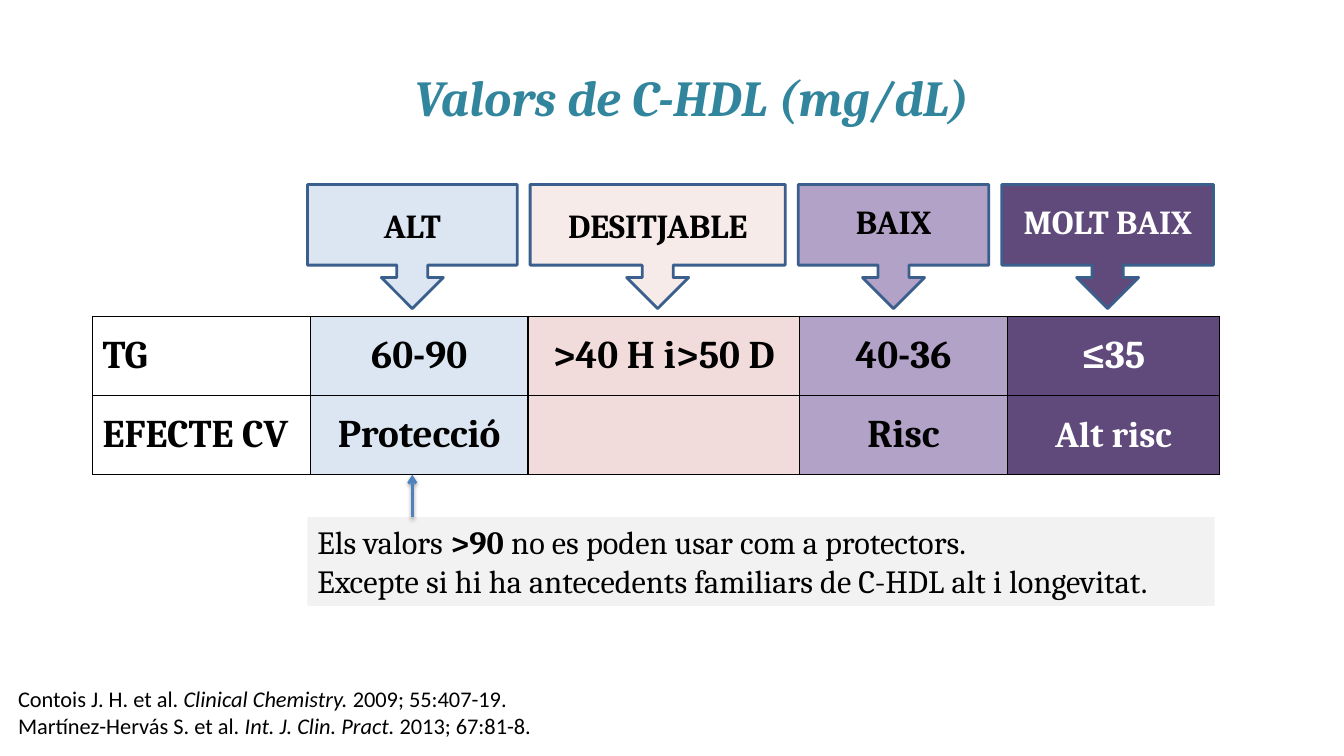
from dataclasses import dataclass

import pptx
import pptx.dml.color
import pptx.enum.shapes
import pptx.enum.text
import pptx.oxml
import pptx.oxml.ns
import pptx.util

Pt = pptx.util.Pt
RGBColor = pptx.dml.color.RGBColor
MSO_SHAPE = pptx.enum.shapes.MSO_SHAPE
PP_ALIGN = pptx.enum.text.PP_ALIGN
MSO_ANCHOR = pptx.enum.text.MSO_ANCHOR

BLACK = RGBColor(0x00, 0x00, 0x00)
WHITE = RGBColor(0xFF, 0xFF, 0xFF)
TEAL = RGBColor(0x31, 0x85, 0x9C)
PALE_BLUE = RGBColor(0xDC, 0xE6, 0xF2)
PINK = RGBColor(0xF2, 0xDC, 0xDB)
LILAC = RGBColor(0xB3, 0xA2, 0xC7)
PURPLE = RGBColor(0x60, 0x4A, 0x7B)
GREY = RGBColor(0xF2, 0xF2, 0xF2)
OUTLINE = RGBColor(0x3A, 0x5F, 0x8C)
ARROW_BLUE = RGBColor(0x4F, 0x81, 0xBD)

CALLOUT_LEFT, CALLOUT_TOP, CALLOUT_HEIGHT, CALLOUT_GAP = 219.6, 131.8, 88.6, 9.3
TABLE_LEFT, TABLE_TOP, ROW_HEIGHT = 66.2, 226.1, 56.5
NOTE_TOP = 369.4


@dataclass(frozen=True)
class Run:
    text: str
    bold: bool = False
    italic: bool = False


@dataclass(frozen=True)
class Callout:
    label: str
    width: float
    fill: RGBColor
    color: RGBColor = BLACK
    spacing: float = 1.0
    opacity: int = 100


@dataclass(frozen=True)
class Column:
    width: float
    tg: str
    effect: str
    fill: RGBColor
    color: RGBColor = BLACK
    align: PP_ALIGN = PP_ALIGN.CENTER
    effect_size: float = 28


CALLOUTS = [
    Callout("ALT", 149.8, PALE_BLUE),
    Callout("DESITJABLE", 182.2, PINK, opacity=56),
    Callout("BAIX", 136.1, LILAC, spacing=0.8),
    Callout("MOLT BAIX", 151.2, PURPLE, WHITE, spacing=0.8),
]
COLUMNS = [
    Column(155.5, "TG", "EFECTE CV", WHITE, align=PP_ALIGN.LEFT),
    Column(155.5, "60-90", "Protecció", PALE_BLUE),
    Column(193.7, ">40 H i>50 D", "", PINK),
    Column(149, "40-36", "Risc", LILAC),
    Column(151.2, "≤35", "Alt risc", PURPLE, WHITE, effect_size=26),
]
NOTE = [
    [Run("Els valors "), Run(">90 ", bold=True), Run("no es poden usar com a protectors.")],
    [Run("Excepte si hi ha antecedents familiars de C-HDL alt i longevitat.")],
]
REFERENCES = [
    [Run("Contois J. H. et al. "), Run("Clinical Chemistry. ", italic=True),
     Run("2009; 55:407-19.")],
    [Run("Martínez-Hervás S. et al. "), Run("Int. J. Clin. Pract. ", italic=True),
     Run("2013; 67:81-8.")],
]


def write(tf, lines: list[list[Run]], *, size: float, font: str = "Cambria",
          color: RGBColor = BLACK, align: PP_ALIGN = PP_ALIGN.LEFT,
          spacing: float = 1.0, space: float = 0) -> None:
    """Fill a text frame with one paragraph per line of runs."""
    tf.word_wrap = True
    for i, line in enumerate(lines):
        p = tf.paragraphs[0] if i == 0 else tf.add_paragraph()
        p.alignment = align
        p.line_spacing = spacing
        p.space_before = p.space_after = Pt(space)
        for run in line:
            r = p.add_run()
            r.text = run.text
            r.font.name, r.font.size = font, Pt(size)
            r.font.bold, r.font.italic = run.bold, run.italic
            r.font.color.rgb = color


def add_xml(parent, xml: str) -> None:
    tag, rest = xml.split(" ", 1) if " " in xml.split(">")[0] else xml.split(">", 1)
    joint = " " if " " in xml.split(">")[0] else ">"
    parent.append(pptx.oxml.parse_xml(f"{tag} {pptx.oxml.ns.nsdecls('a')}{joint}{rest}"))


def add_callouts(slide) -> None:
    left = CALLOUT_LEFT
    for c in CALLOUTS:
        sp = slide.shapes.add_shape(MSO_SHAPE.DOWN_ARROW_CALLOUT, Pt(left), Pt(CALLOUT_TOP),
                                    Pt(c.width), Pt(CALLOUT_HEIGHT))
        sp.shadow.inherit = False
        sp.fill.solid()
        sp.fill.fore_color.rgb = c.fill
        if c.opacity < 100:
            color = sp._element.spPr.find(".//" + pptx.oxml.ns.qn("a:srgbClr"))
            add_xml(color, f'<a:alpha val="{c.opacity * 1000}"/>')
        sp.line.color.rgb = OUTLINE
        sp.line.width = Pt(2)
        sp.text_frame.vertical_anchor = MSO_ANCHOR.MIDDLE
        write(sp.text_frame, [[Run(c.label, bold=True)]], size=24, color=c.color,
              align=PP_ALIGN.CENTER, spacing=c.spacing)
        left += c.width + CALLOUT_GAP


def fill_cell(cell, fill: RGBColor) -> None:
    """Give a cell thin black borders and a solid fill."""
    for side in ("lnL", "lnR", "lnT", "lnB"):
        add_xml(cell._tc.get_or_add_tcPr(),
                f'<a:{side} w="12700"><a:solidFill><a:srgbClr val="{BLACK}"/>'
                f'</a:solidFill></a:{side}>')
    cell.fill.solid()
    cell.fill.fore_color.rgb = fill
    cell.vertical_anchor = MSO_ANCHOR.MIDDLE


def add_values_table(slide) -> None:
    table = slide.shapes.add_table(2, len(COLUMNS), Pt(TABLE_LEFT), Pt(TABLE_TOP),
                                   Pt(sum(c.width for c in COLUMNS)),
                                   Pt(2 * ROW_HEIGHT)).table
    table.first_row = table.horz_banding = False
    for row in table.rows:
        row.height = Pt(ROW_HEIGHT)
    for x, c in enumerate(COLUMNS):
        table.columns[x].width = Pt(c.width)
        for y, (text, size) in enumerate([(c.tg, 28), (c.effect, c.effect_size)]):
            cell = table.cell(y, x)
            fill_cell(cell, c.fill)
            if text:
                write(cell.text_frame, [[Run(text, bold=True)]], size=size, color=c.color,
                      align=c.align, space=6)


def add_note(slide) -> None:
    sp = slide.shapes.add_shape(MSO_SHAPE.RECTANGLE, Pt(CALLOUT_LEFT), Pt(NOTE_TOP),
                                Pt(648), Pt(63.4))
    sp.shadow.inherit = False
    sp.fill.solid()
    sp.fill.fore_color.rgb = GREY
    sp.line.fill.background()
    sp.text_frame.vertical_anchor = MSO_ANCHOR.TOP
    write(sp.text_frame, NOTE, size=23.1)


def add_note_arrow(slide) -> None:
    x = Pt(CALLOUT_LEFT + CALLOUTS[0].width / 2)
    arrow = slide.shapes.add_connector(pptx.enum.shapes.MSO_CONNECTOR.STRAIGHT, x, Pt(NOTE_TOP),
                                       x, Pt(TABLE_TOP + 2 * ROW_HEIGHT))
    arrow.line.color.rgb = ARROW_BLUE
    arrow.line.width = Pt(2)
    add_xml(arrow.line._get_or_add_ln(), '<a:tailEnd type="arrow"/>')
    add_xml(arrow._element.spPr,
            f'<a:effectLst><a:outerShdw blurRad="{Pt(3.1)}" dist="{Pt(1.6)}" dir="5400000" '
            f'rotWithShape="0"><a:srgbClr val="{BLACK}"><a:alpha val="38000"/></a:srgbClr>'
            '</a:outerShdw></a:effectLst>')


def add_textbox(slide, left: float, top: float, width: float, height: float):
    return slide.shapes.add_textbox(Pt(left), Pt(top), Pt(width), Pt(height)).text_frame


def main() -> None:
    prs = pptx.Presentation()
    prs.slide_width, prs.slide_height = Pt(960), Pt(540)
    slide = prs.slides.add_slide(prs.slide_layouts[6])

    title = add_textbox(slide, 56.2, 48.2, 876.2, 46.8)
    title.vertical_anchor = MSO_ANCHOR.MIDDLE
    write(title, [[Run("Valors de C-HDL (mg/dL)", bold=True, italic=True)]], size=36,
          color=TEAL, align=PP_ALIGN.CENTER, spacing=0.9)
    add_callouts(slide)
    add_values_table(slide)
    add_note(slide)
    add_note_arrow(slide)
    write(add_textbox(slide, 5.8, 486, 499, 46.1), REFERENCES, size=16, font="Calibri")
    prs.save("out.pptx")


if __name__ == "__main__":
    main()
